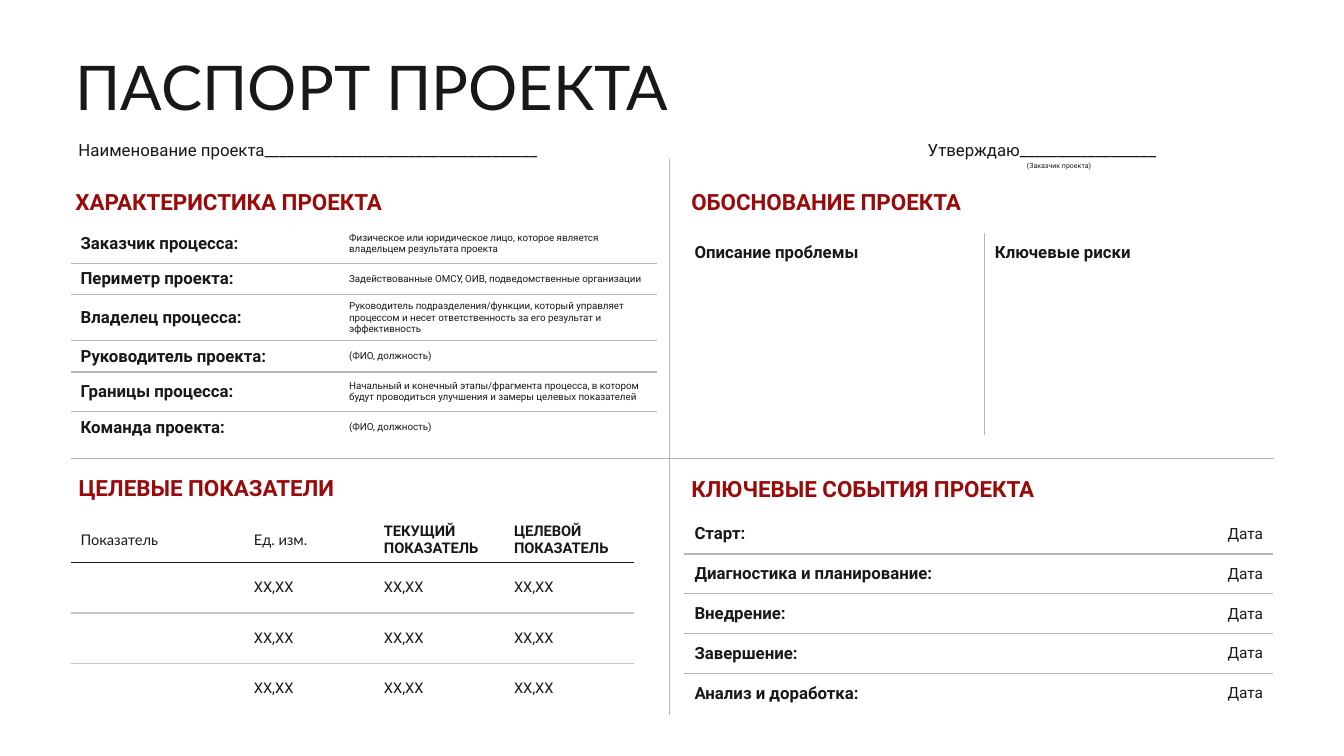
import pptx
import pptx.util
import pptx.dml.color
import pptx.enum.shapes
import pptx.enum.text
import pptx.oxml
import pptx.oxml.ns

Pt = pptx.util.Pt
ALIGN = pptx.enum.text.PP_ALIGN
ANCHOR = pptx.enum.text.MSO_ANCHOR
NS = pptx.oxml.ns.nsdecls("a")
HUES = {"ink": "181818", "red": "990A0A", "rule": "B5B5B5", "pale": "C5C5C5"}


def tint(name):
    return pptx.dml.color.RGBColor.from_string(HUES[name])


def write(para, text, size, bold=False, face="Roboto", hue="ink"):
    run = para.add_run()
    run.text = text
    run.font.size = Pt(size)
    run.font.bold = bold
    run.font.name = face
    run.font.color.rgb = tint(hue)


def label(slide, box, text, size, bold=False, hue="ink"):
    frame = slide.shapes.add_textbox(*map(Pt, box)).text_frame
    frame.word_wrap = True
    write(frame.paragraphs[0], text, size, bold, hue=hue)
    return frame.paragraphs[0]


def caption(slide, left, top, text):
    label(slide, (left, top, 425, 26.6), text, 16, True, "red")


def line(slide, start, end):
    link = slide.shapes.add_connector(
        pptx.enum.shapes.MSO_CONNECTOR.STRAIGHT, *map(Pt, start + end))
    link.line.color.rgb = tint("rule")
    link.line.width = Pt(1)
    link._element.spPr.append(pptx.oxml.parse_xml(f"<a:effectLst {NS}/>"))


def edge(cell, side, hue, width):
    fill = f'<a:solidFill><a:srgbClr val="{HUES[hue]}"/></a:solidFill>' if hue else "<a:noFill/>"
    cell._tc.get_or_add_tcPr().append(pptx.oxml.parse_xml(
        f'<a:ln{side} {NS} w="{Pt(width)}">{fill}</a:ln{side}>'))


def grid(slide, spot, cols, rows, cells, across=(), down=()):
    box = map(Pt, (*spot, sum(cols), sum(rows)))
    table = slide.shapes.add_table(len(rows), len(cols), *box).table
    table.first_row = table.horz_banding = False
    for col, width in zip(table.columns, cols):
        col.width = Pt(width)
    for row, height in zip(table.rows, rows):
        row.height = Pt(height)
    none = (None, 1)
    across = [none, *(across or [none] * (len(rows) - 1)), none]
    down = [none, *(down or [none] * (len(cols) - 1)), none]
    for r, texts in enumerate(cells):
        for c, (text, size, bold, face, align) in enumerate(texts):
            cell = table.cell(r, c)
            edge(cell, "L", *down[c])
            edge(cell, "R", *down[c + 1])
            edge(cell, "T", *across[r])
            edge(cell, "B", *across[r + 1])
            cell.fill.background()
            cell.vertical_anchor = ANCHOR.MIDDLE
            para = cell.text_frame.paragraphs[0]
            para.alignment = align
            if text:
                write(para, text, size, bold, face)


def item(text, size=12, bold=True, face="Roboto", align=ALIGN.LEFT):
    return text, size, bold, face, align


def head(slide, left, top, width):
    title = slide.shapes.title
    title.left, title.top, title.width, title.height = map(Pt, (left, top, width, 56.9))
    frame = title.text_frame
    frame.word_wrap = True
    frame.auto_size = pptx.enum.text.MSO_AUTO_SIZE.NONE
    frame.vertical_anchor = ANCHOR.TOP
    para = frame.paragraphs[0]
    para.alignment = ALIGN.LEFT
    para.line_spacing = 0.9
    write(para, "ПАСПОРТ ПРОЕКТА", 44, face="Lato")
    para = label(slide, (left + 2.2, top + 59, 880, 21.8),
                 "Наименование проекта" + "_" * 36, 12)
    para._p.get_or_add_pPr().append(pptx.oxml.parse_xml(
        f'<a:tabLst {NS}><a:tab pos="{Pt(606.6)}" algn="l"/></a:tabLst>'))
    write(para, "\tУтверждаю" + "_" * 18, 12)
    label(slide, (left + 679.7, top + 74.2, 103.7, 13.7), "(Заказчик проекта)", 5)


def cross(slide, left, top, width, height):
    line(slide, (left + 427.7, top), (left + 427.7, top + height))
    line(slide, (left, top + 213.8), (left + width, top + 213.8))


def traits(slide, left, top):
    caption(slide, left - 3.6, top, "ХАРАКТЕРИСТИКА ПРОЕКТА")
    facts = [
        ("Заказчик процесса:", "Физическое или юридическое лицо, которое является владельцем результата проекта"),
        ("Периметр проекта:", "Задействованные ОМСУ, ОИВ, подведомственные организации"),
        ("Владелец процесса:", "Руководитель подразделения/функции, который управляет процессом и несет ответственность за его результат и эффективность"),
        ("Руководитель проекта:", "(ФИО, должность)"),
        ("Границы процесса:", "Начальный и конечный этапы/фрагмента процесса, в котором будут проводиться улучшения и замеры целевых показателей"),
        ("Команда проекта:", "(ФИО, должность)"),
    ]
    cells = [(item(name), item(note, 7, False)) for name, note in facts]
    grid(slide, (left, top + 28.8), (191.8, 227), (28.4, 22.5, 32.6, 22.5, 28.4, 22.5),
         cells, [("rule", 1)] * 5)


def grounds(slide, left, top):
    caption(slide, left - 2.2, top, "ОБОСНОВАНИЕ ПРОЕКТА")
    cells = [(item("Описание проблемы"), item("Ключевые риски")), (item(""), item(""))]
    grid(slide, (left, top + 35.3), (214.6, 206), (28.4, 116.3), cells, down=[("rule", 1)])


def goals(slide, left, top):
    caption(slide, left - 1.4, top, "ЦЕЛЕВЫЕ ПОКАЗАТЕЛИ")
    cells = [[item("Показатель", 10.5, False, "Lato"), item("Ед. изм.", 10.5, False, "Lato"),
              item("ТЕКУЩИЙ ПОКАЗАТЕЛЬ", 10.5), item("ЦЕЛЕВОЙ ПОКАЗАТЕЛЬ", 10.5)]]
    cells += [[item("")] + [item("ХХ,ХХ", 10.5, False)] * 3] * 3
    grid(slide, (left, top + 34.6), (123.8, 92.9, 92.9, 92.9), (32.2, 36, 36, 36),
         cells, [("ink", 1.5), ("pale", 1), ("pale", 1)])


def steps(slide, left, top):
    caption(slide, left - 2.2, top, "КЛЮЧЕВЫЕ СОБЫТИЯ ПРОЕКТА")
    names = ("Старт:", "Диагностика и планирование:", "Внедрение:",
             "Завершение:", "Анализ и доработка:")
    cells = [(item(name), item("Дата", 11, False, align=ALIGN.RIGHT)) for name in names]
    grid(slide, (left, top + 31.7), (268.6, 152), [28.5] * 5, cells, [("rule", 1)] * 4)


def main():
    deck = pptx.Presentation()
    deck.slide_width, deck.slide_height = Pt(960), Pt(540)
    slide = deck.slides.add_slide(deck.slide_layouts[5])
    cross(slide, 50.4, 113.8, 859.7, 396.7)
    traits(slide, 50.4, 131)
    grounds(slide, 488.9, 131)
    goals(slide, 50.4, 334.8)
    steps(slide, 488.9, 335.5)
    head(slide, 46.8, 37.4, 912)
    deck.save("out.pptx")


if __name__ == "__main__":
    main()
